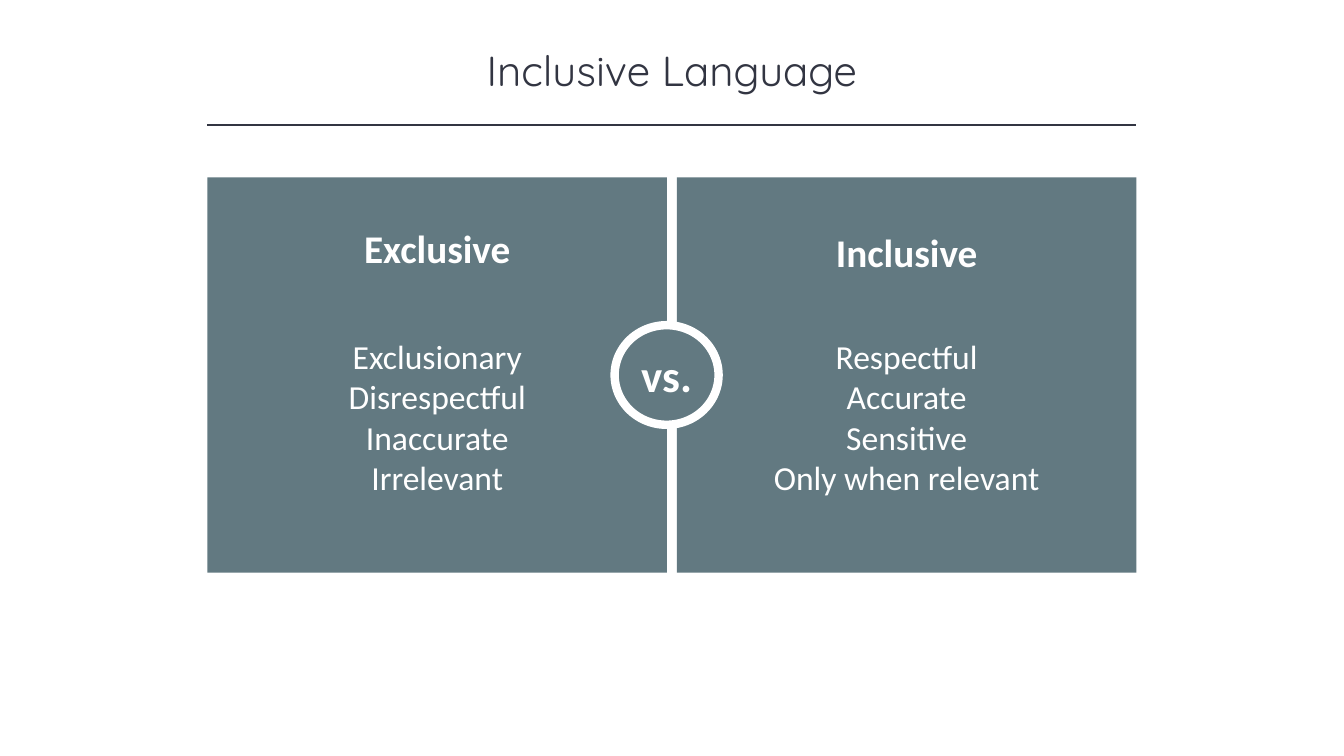
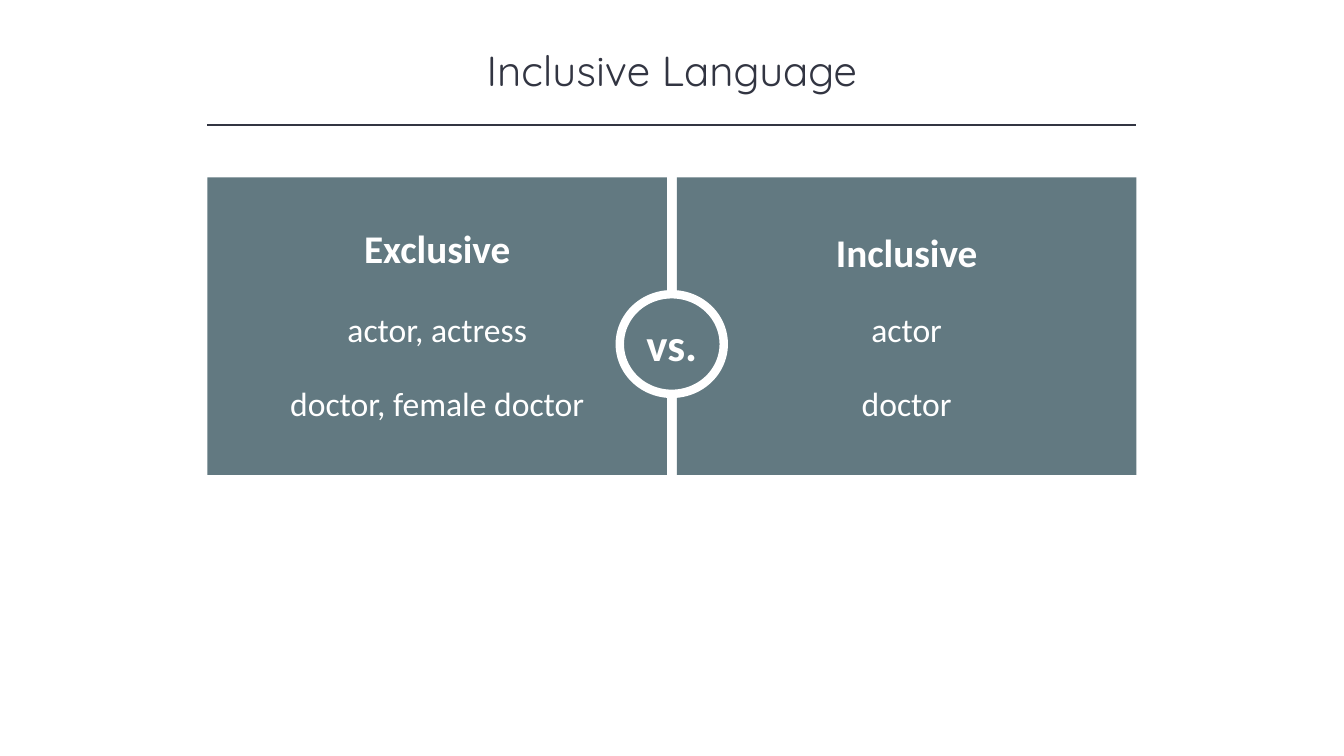
from lxml.etree import SubElement
from pptx import Presentation
from pptx.dml.color import RGBColor
from pptx.enum.shapes import MSO_CONNECTOR, MSO_SHAPE
from pptx.enum.text import MSO_ANCHOR, PP_ALIGN
from pptx.oxml.ns import qn
from pptx.util import Cm, Pt

# Shared look
SLATE, INK, WHITE = "627981", "323542", "FFFFFF"
BODY_FONT, TITLE_FONT = "Calibri", "Quicksand"

# Shared layout, in centimetres
SLIDE_WIDTH, SLIDE_HEIGHT = 33.87, 19.05
PANEL_WIDTH, PANEL_TOP, PANEL_GAP = 11.58, 4.47, 0.25
PANEL_LEFT = (SLIDE_WIDTH - PANEL_GAP) / 2 - PANEL_WIDTH
PANEL_LEFTS = [PANEL_LEFT, PANEL_LEFT + PANEL_WIDTH + PANEL_GAP]
HEADINGS = [("Exclusive", 5.51), ("Inclusive", 5.61)]
HEADING_WIDTH, HEADING_HEIGHT = 9.22, 1.45
BADGE_WIDTH, BADGE_HEIGHT = 2.62, 2.51


def colour(code):
    return RGBColor.from_string(code)


def write(box, text, size, font=BODY_FONT, ink=WHITE, bold=False,
          anchor=MSO_ANCHOR.MIDDLE):
    """Fill a box with centred text, one paragraph for each line."""
    frame = box.text_frame
    frame.word_wrap = True
    frame.vertical_anchor = anchor
    for index, line in enumerate(text.split("\n")):
        para = frame.add_paragraph() if index else frame.paragraphs[0]
        para.alignment = PP_ALIGN.CENTER
        span = para.add_run()
        span.text = line
        span.font.name = font
        span.font.size = Pt(size)
        span.font.bold = bold
        span.font.color.rgb = colour(ink)


def add_block(page, left, top, width, height, kind=MSO_SHAPE.RECTANGLE):
    """Add a slate shape without outline or shadow."""
    box = page.shapes.add_shape(kind, Cm(left), Cm(top), Cm(width), Cm(height))
    box.shadow.inherit = False
    box.fill.solid()
    box.fill.fore_color.rgb = colour(SLATE)
    box.line.fill.background()
    return box


def add_label(page, side, text, top, width, height, size, bold=False):
    """Add text centred across the left (0) or right (1) panel."""
    left = PANEL_LEFTS[side] + (PANEL_WIDTH - width) / 2
    write(add_block(page, left, top, width, height), text, size, bold=bold)


def add_title(page, text):
    width = 25.4
    box = page.shapes.add_textbox(Cm((SLIDE_WIDTH - width) / 2), Cm(0.99),
                                  Cm(width), Cm(1.55))
    write(box, text, 30, font=TITLE_FONT, ink=INK, anchor=MSO_ANCHOR.TOP)


def add_rule(page):
    y = Cm(3.15)
    rule = page.shapes.add_connector(
        MSO_CONNECTOR.STRAIGHT, Cm(PANEL_LEFT), y,
        Cm(SLIDE_WIDTH - PANEL_LEFT), y)
    rule.line.color.rgb = colour(INK)
    rule.line.width = Pt(1)
    SubElement(rule._element.spPr, qn("a:effectLst"))


def add_badge(page, centre_x, centre_y):
    badge = add_block(page, centre_x - BADGE_WIDTH / 2,
                      centre_y - BADGE_HEIGHT / 2,
                      BADGE_WIDTH, BADGE_HEIGHT, MSO_SHAPE.OVAL)
    badge.line.color.rgb = colour(WHITE)
    badge.line.width = Pt(6)
    write(badge, "vs.", 32, bold=True)


def add_comparison(deck, panel_height, badge_centre, rows):
    """Add a slide; each row is a top, a height and a (text, width) per side."""
    page = deck.slides.add_slide(deck.slide_layouts[6])
    add_title(page, "Inclusive Language")
    add_rule(page)
    for left in PANEL_LEFTS:
        add_block(page, left, PANEL_TOP, PANEL_WIDTH, panel_height)
    for side, (heading, top) in enumerate(HEADINGS):
        add_label(page, side, heading, top, HEADING_WIDTH, HEADING_HEIGHT,
                  28, bold=True)
    add_badge(page, *badge_centre)
    for top, height, entries in rows:
        for side, (text, width) in enumerate(entries):
            add_label(page, side, text, top, width, height, 24)


def main():
    deck = Presentation()
    deck.slide_width, deck.slide_height = Cm(SLIDE_WIDTH), Cm(SLIDE_HEIGHT)

    # Qualities of each kind of language
    add_comparison(deck, 9.96, (16.8, 9.45), [
        (8.31, 4.37, [
            ("Exclusionary\nDisrespectful\nInaccurate\nIrrelevant", 8.36),
            ("Respectful\nAccurate\nSensitive\nOnly when relevant", 8.43)]),
    ])

    # Examples
    add_comparison(deck, 7.5, (16.93, 8.67), [
        (7.65, 1.27, [("actor, actress", 5.82), ("actor", 4.6)]),
        (9.52, 1.27, [("doctor, female doctor", 8.1), ("doctor", 3.1)]),
    ])
    deck.save("out.pptx")


if __name__ == "__main__":
    main()
